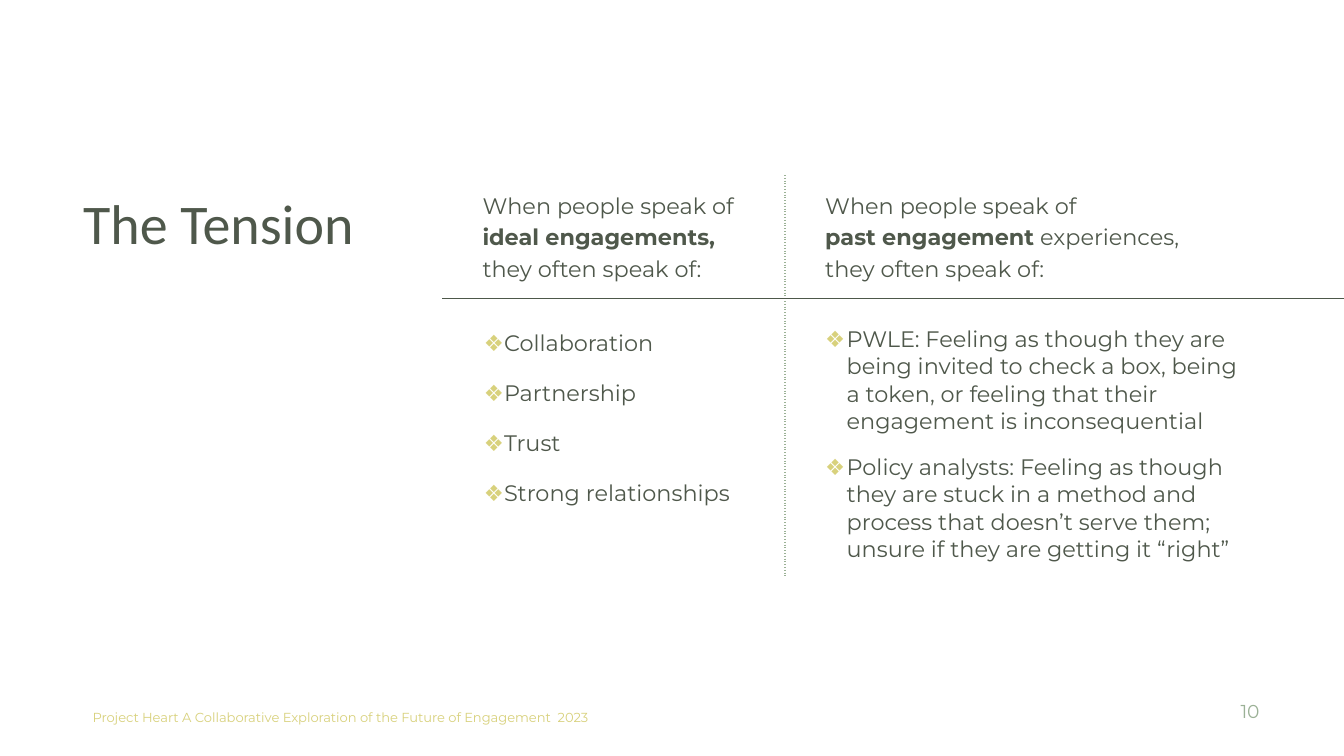
from dataclasses import dataclass

from lxml.etree import SubElement
from pptx import Presentation
from pptx.dml.color import RGBColor
from pptx.enum.text import MSO_ANCHOR, MSO_AUTO_SIZE, PP_ALIGN
from pptx.oxml.ns import qn
from pptx.util import Inches, Pt


@dataclass(frozen=True)
class Theme:
    width: float = 10
    height: float = 10 * 9 / 16
    ink: str = "4F584B"
    accent: str = "D8D17C"
    muted: str = "9BB196"
    rule: str = "4D584A"
    heading_font: str = "Calibri"
    body_font: str = "Montserrat"
    title_size: int = 30
    body_size: int = 12
    number_size: int = 10
    footer_size: int = 7
    rule_width: float = 0.75
    plain_table: str = "{2D5ABB26-0587-4C30-8999-92F81FD0307C}"


THEME = Theme()

HEADINGS = [
    [
        [("When people speak of ", False)],
        [("ideal engagements, ", True)],
        [("they often speak of:", False)],
    ],
    [
        [("When people speak of ", False)],
        [("past engagement", True), (" experiences, ", False)],
        [("they often speak of:", False)],
    ],
]
IDEALS = ["Collaboration", "Partnership", "Trust", "Strong relationships"]
EXPERIENCES = [
    "PWLE: Feeling as though they are being invited to check a box, being a token, "
    "or feeling that their engagement is inconsequential",
    "Policy analysts: Feeling as though they are stuck in a method and process that "
    "doesn’t serve them; unsure if they are getting it “right”",
]


def across(percent):
    return Inches(THEME.width * percent / 100)


def down(percent):
    return Inches(THEME.height * percent / 100)


def set_all(target, values):
    for name, value in values.items():
        setattr(target, name, value)


def add_run(paragraph, text, size, color, font=THEME.body_font, bold=False):
    run = paragraph.add_run()
    run.text = text
    set_all(run.font, {"name": font, "size": Pt(size), "bold": bold})
    run.font.color.rgb = RGBColor.from_string(color)


def add_label(slide, box, text, size, color, font=THEME.body_font, **format_values):
    left, top, width, height = box
    shape = slide.shapes.add_textbox(across(left), down(top), across(width), down(height))
    frame = shape.text_frame
    margins = ("margin_left", "margin_top", "margin_right", "margin_bottom")
    set_all(frame, {
        "word_wrap": True,
        "auto_size": MSO_AUTO_SIZE.NONE,
        "vertical_anchor": MSO_ANCHOR.TOP,
        **dict.fromkeys(margins, Inches(0.1)),
    })
    paragraph = frame.paragraphs[0]
    set_all(paragraph, format_values)
    add_run(paragraph, text, size, color, font)


def add_border(cell, side, color=None, dash="solid"):
    properties = cell._tc.get_or_add_tcPr()
    line = SubElement(properties, qn(f"a:ln{side}"), w=str(Pt(THEME.rule_width)))
    if color is None:
        SubElement(line, qn("a:noFill"))
        return
    fill = SubElement(line, qn("a:solidFill"))
    SubElement(fill, qn("a:srgbClr"), val=color)
    SubElement(line, qn("a:prstDash"), val=dash)


def add_bullet(paragraph, indent, hanging):
    properties = paragraph._p.get_or_add_pPr()
    properties.set("marL", str(Inches(indent)))
    properties.set("indent", str(-Inches(hanging)))
    color = SubElement(properties, qn("a:buClr"))
    SubElement(color, qn("a:srgbClr"), val=THEME.accent)
    SubElement(properties, qn("a:buSzPct"), val="100000")
    SubElement(properties, qn("a:buFont"), typeface=THEME.body_font)
    SubElement(properties, qn("a:buChar"), char="❖")


def write_heading(cell, lines):
    paragraph = cell.text_frame.paragraphs[0]
    paragraph.line_spacing = 1.15
    for index, line in enumerate(lines):
        if index:
            paragraph.add_line_break()
        for text, bold in line:
            add_run(paragraph, text, THEME.body_size, THEME.ink, bold=bold)


def write_bullets(cell, items, hanging, line_spacing):
    frame = cell.text_frame
    for index, item in enumerate(items):
        paragraph = frame.add_paragraph() if index else frame.paragraphs[0]
        set_all(paragraph, {
            "line_spacing": line_spacing,
            "space_before": Pt(10 if index else 0),
            "space_after": Pt(10 if index == len(items) - 1 else 0),
        })
        add_bullet(paragraph, 0.16, hanging)
        add_run(paragraph, item, THEME.body_size, THEME.ink)


def style_cell(cell, row, column):
    set_all(cell, {
        "margin_left": Inches(0.3),
        "margin_top": Inches(0.2 if row else 0.1),
        "margin_right": Inches(0.3 if column == 1 else 0.1),
        "margin_bottom": Inches(0.1),
    })
    dotted = (THEME.muted, "dot")
    sides = [{"R": dotted}, {"L": dotted, "R": ()}, {"L": ()}][column]
    for side, line in sides.items():
        add_border(cell, side, *line)
    add_border(cell, "T" if row else "B", THEME.rule)
    cell.fill.background()


def add_comparison(slide, left, top, column_shares, row_shares):
    frame = slide.shapes.add_table(
        len(row_shares), len(column_shares), across(left), down(top),
        across(sum(column_shares)), down(sum(row_shares)))
    table = frame.table
    set_all(table, {"first_row": False, "horz_banding": False})
    table._tbl.tblPr.find(qn("a:tableStyleId")).text = THEME.plain_table
    for column, share in zip(table.columns, column_shares):
        column.width = across(share)
    for row, share in zip(table.rows, row_shares):
        row.height = down(share)
    for row in range(len(row_shares)):
        for column in range(len(column_shares)):
            style_cell(table.cell(row, column), row, column)
    for column, lines in enumerate(HEADINGS):
        write_heading(table.cell(0, column), lines)
    write_bullets(table.cell(1, 0), IDEALS, 0.15, 1.15)
    write_bullets(table.cell(1, 1), EXPERIENCES, 0.18, 1.0)


def main():
    presentation = Presentation()
    set_all(presentation, {"slide_width": across(100), "slide_height": down(100)})
    slide = presentation.slides.add_slide(presentation.slide_layouts[6])
    add_label(slide, (5.9, 92.5, 67.1, 7.5),
              "Project Heart A Collaborative Exploration of the Future of Engagement  2023",
              THEME.footer_size, THEME.accent,
              line_spacing=0.8, space_before=Pt(20), space_after=Pt(10))
    add_label(slide, (5.2, 23.15, 29.5, 67.6), "The Tension",
              THEME.title_size, THEME.ink, THEME.heading_font)
    add_comparison(slide, 32.9, 23.15, (25.5, 37.5, 6.4), (16.36, 36.27))
    add_label(slide, (88.3, 90.75, 6.4, 9.25), "10",
              THEME.number_size, THEME.muted, alignment=PP_ALIGN.RIGHT)
    presentation.save("out.pptx")


if __name__ == "__main__":
    main()
